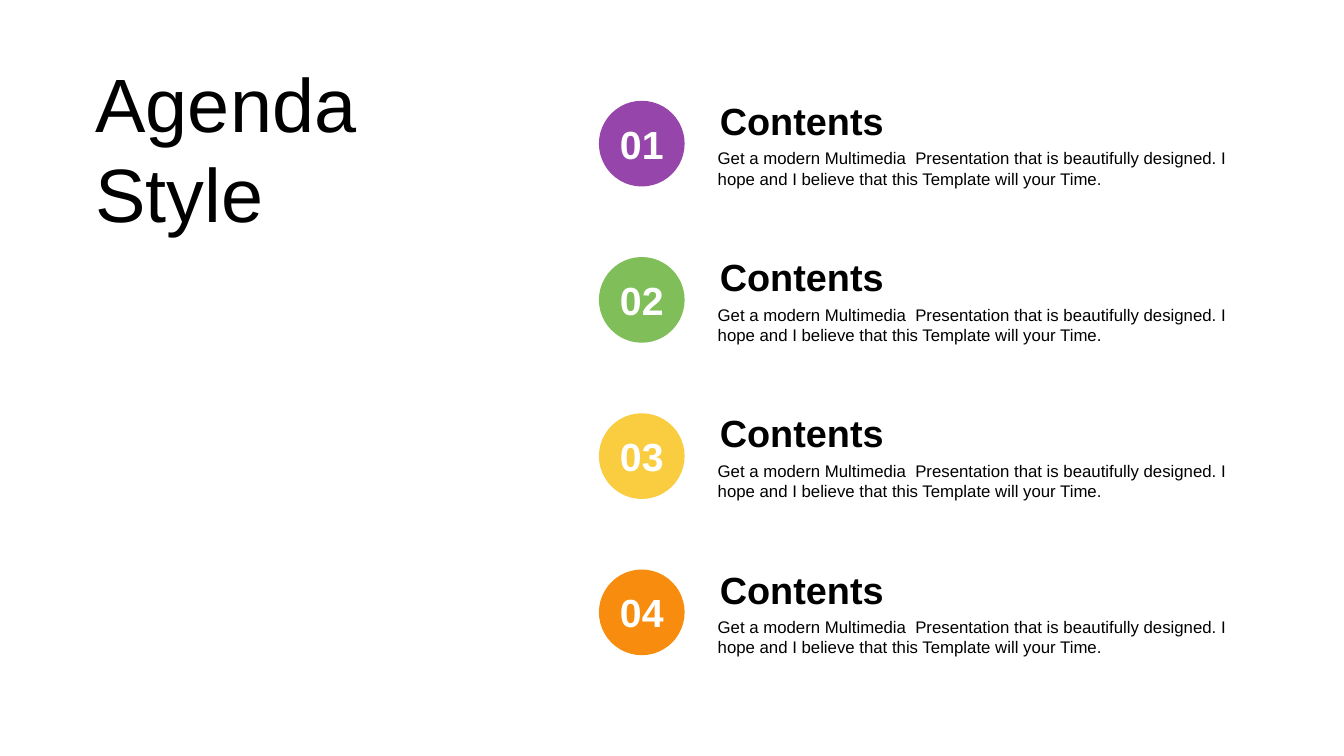
from pptx import Presentation
from pptx.dml.color import RGBColor
from pptx.enum.shapes import MSO_SHAPE
from pptx.enum.text import MSO_ANCHOR, PP_ALIGN
from pptx.util import Pt

PX = 9144  # EMU per px, 100 px to the inch
SLIDE_W, SLIDE_H = 1333, 750

BLACK = RGBColor(0x00, 0x00, 0x00)
WHITE = RGBColor(0xFF, 0xFF, 0xFF)
PURPLE = RGBColor(0x96, 0x46, 0xAA)
GREEN = RGBColor(0x80, 0xBE, 0x5A)
YELLOW = RGBColor(0xF9, 0xCD, 0x3F)
ORANGE = RGBColor(0xF7, 0x8C, 0x0E)

FONT = "Arial"
HEADING = "Contents"
DESCRIPTION = (
    "Get a modern Multimedia  Presentation that is beautifully designed. "
    "I hope and I believe that this Template will your Time."
)
ITEM_COLORS = [PURPLE, GREEN, YELLOW, ORANGE]
ITEM_PITCH = 155


def px(*lengths):
    return [length * PX for length in lengths]


def add_text(slide, box, text, size, color=BLACK, bold=False,
             align=PP_ALIGN.LEFT, anchor=MSO_ANCHOR.TOP, side_inset=10):
    frame = slide.shapes.add_textbox(*px(*box)).text_frame
    frame.word_wrap = True
    frame.vertical_anchor = anchor
    frame.margin_left = frame.margin_right = side_inset * PX
    frame.margin_top = frame.margin_bottom = 5 * PX
    paragraph = frame.paragraphs[0]
    paragraph.alignment = align
    run = paragraph.add_run()
    run.text = text
    run.font.name = FONT
    run.font.size = Pt(size)
    run.font.bold = bold
    run.font.color.rgb = color


def add_title(slide, box):
    add_text(slide, box, "Agenda Style", 54, anchor=MSO_ANCHOR.MIDDLE)


def add_agenda_item(slide, box, number, color):
    left, top, width, _ = box
    text_left, text_width = left + 108, width - 108

    # Coloured disc
    disc = slide.shapes.add_shape(MSO_SHAPE.OVAL, *px(left, top + 8, 85, 85))
    disc.shadow.inherit = False
    disc.fill.solid()
    disc.fill.fore_color.rgb = color
    disc.line.fill.background()

    # Description, heading and number
    add_text(slide, (text_left, top + 50, text_width, 50), DESCRIPTION, 12)
    add_text(slide, (text_left, top, text_width, 56), HEADING, 27,
             bold=True, side_inset=12)
    add_text(slide, (left + 5, top + 22, 75, 57), f"{number:02d}", 28, WHITE,
             bold=True, align=PP_ALIGN.CENTER, side_inset=12)


def add_agenda(slide, box):
    left, top, width, _ = box
    for index, color in enumerate(ITEM_COLORS):
        item_box = (left, top + index * ITEM_PITCH, width, 100)
        add_agenda_item(slide, item_box, index + 1, color)


def main():
    prs = Presentation()
    prs.slide_width, prs.slide_height = px(SLIDE_W, SLIDE_H)
    slide = prs.slides.add_slide(prs.slide_layouts[6])
    add_title(slide, (85, 50, 297, 192))
    add_agenda(slide, (594, 92, 668, 565))
    prs.save("out.pptx")


if __name__ == "__main__":
    main()
